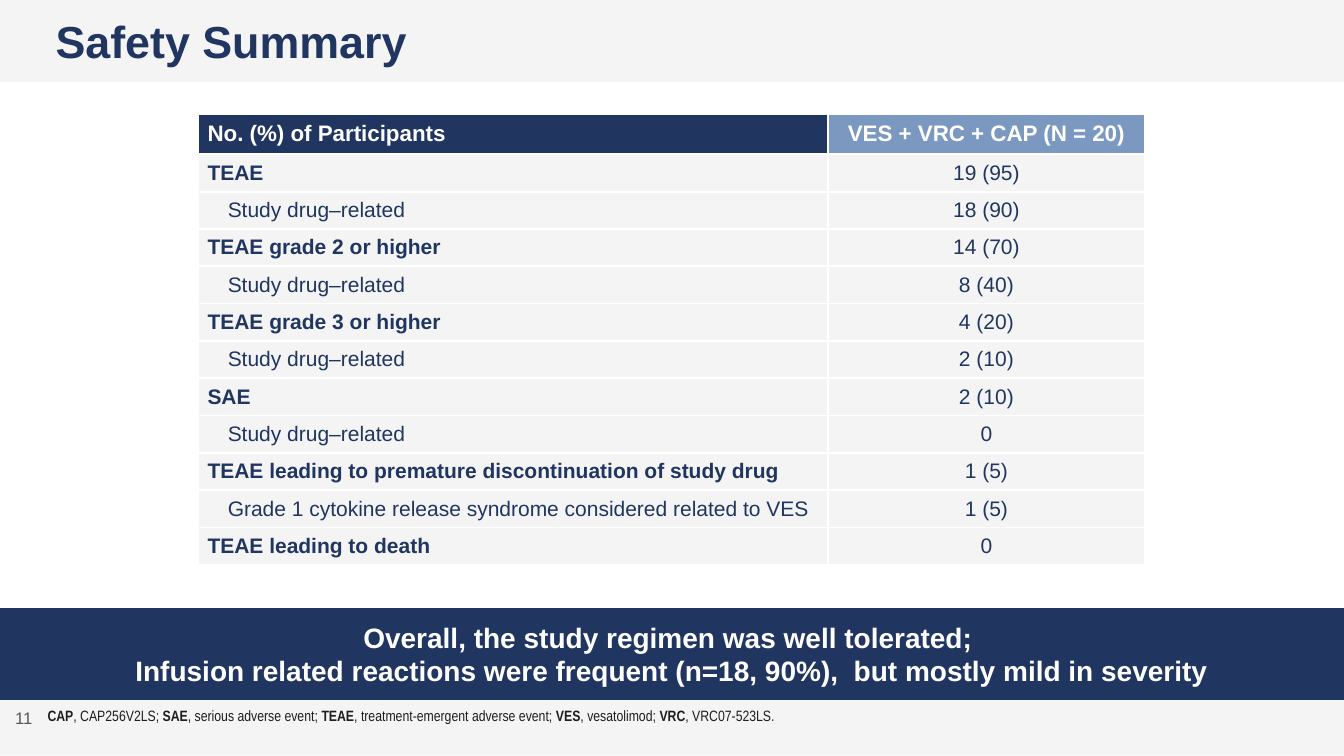
from lxml.etree import SubElement
from pptx import Presentation
from pptx.dml.color import RGBColor
from pptx.enum.shapes import MSO_SHAPE
from pptx.enum.text import MSO_ANCHOR, PP_ALIGN
from pptx.oxml.ns import qn
from pptx.util import Cm, Pt

COLORS = {
    "navy": "203661",
    "blue": "7B98C1",
    "pale": "F4F4F4",
    "white": "FFFFFF",
    "ink": "1E1E1E",
    "grey": "565656",
}
SLIDE_WIDTH = 33.87
HEADINGS = ("No. (%) of Participants", "VES + VRC + CAP (N = 20)")
EVENTS = [
    ("TEAE", "19 (95)", False),
    ("Study drug–related", "18 (90)", True),
    ("TEAE grade 2 or higher", "14 (70)", False),
    ("Study drug–related", "8 (40)", True),
    ("TEAE grade 3 or higher", "4 (20)", False),
    ("Study drug–related", "2 (10)", True),
    ("SAE", "2 (10)", False),
    ("Study drug–related", "0", True),
    ("TEAE leading to premature discontinuation of study drug", "1 (5)", False),
    ("Grade 1 cytokine release syndrome considered related to VES", "1 (5)", True),
    ("TEAE leading to death", "0", False),
]
ABBREVIATIONS = [
    ("CAP", "CAP256V2LS; "),
    ("SAE", "serious adverse event; "),
    ("TEAE", "treatment-emergent adverse event; "),
    ("VES", "vesatolimod; "),
    ("VRC", "VRC07-523LS."),
]
CONCLUSION = [
    "Overall, the study regimen was well tolerated; ",
    "Infusion related reactions were frequent (n=18, 90%),  but mostly mild in severity",
]


def color(name):
    """Return the named colour."""
    return RGBColor.from_string(COLORS[name])


def add_run(paragraph, text, size, ink, bold=False, font="Arial"):
    """Append one styled run to a paragraph."""
    run = paragraph.add_run()
    run.text = text
    run.font.name = font
    run.font.size = Pt(size)
    run.font.bold = bold
    run.font.color.rgb = color(ink)


def set_frame(frame, left=0, other=0):
    """Wrap a text frame, centre it vertically and set its margins in cm."""
    frame.word_wrap = True
    frame.vertical_anchor = MSO_ANCHOR.MIDDLE
    frame.margin_left = Cm(left)
    frame.margin_top = frame.margin_right = frame.margin_bottom = Cm(other)
    return frame


def add_band(slide, top, height, fill):
    """Draw a plain band across the whole slide."""
    band = slide.shapes.add_shape(
        MSO_SHAPE.RECTANGLE, Cm(0), Cm(top), Cm(SLIDE_WIDTH), Cm(height))
    band.shadow.inherit = False
    band.fill.solid()
    band.fill.fore_color.rgb = color(fill)
    band.line.fill.background()
    return band


def add_label(slide, left, top, width, height, align):
    """Add a text box without margins and return its first paragraph."""
    label = slide.shapes.add_textbox(Cm(left), Cm(top), Cm(width), Cm(height))
    paragraph = set_frame(label.text_frame).paragraphs[0]
    paragraph.alignment = align
    return paragraph


def add_borders(cell):
    """Give a cell white rules on all four sides."""
    properties = cell._tc.get_or_add_tcPr()
    for position, side in enumerate(("a:lnL", "a:lnR", "a:lnT", "a:lnB")):
        rule = properties.makeelement(qn(side), {"w": str(Pt(1.5))})
        solid = SubElement(rule, qn("a:solidFill"))
        SubElement(solid, qn("a:srgbClr"), val=COLORS["white"])
        properties.insert(position, rule)


def fill_cell(cell, text, fill, size, ink, bold, align, indent=0.25):
    """Write and style one table cell."""
    cell.fill.solid()
    cell.fill.fore_color.rgb = color(fill)
    cell.vertical_anchor = MSO_ANCHOR.MIDDLE
    cell.margin_left = Cm(indent)
    paragraph = cell.text_frame.paragraphs[0]
    paragraph.alignment = align
    add_run(paragraph, text, size, ink, bold)
    add_borders(cell)


def add_safety_table(slide):
    """Add the table of adverse events."""
    table = slide.shapes.add_table(
        len(EVENTS) + 1, 2, Cm(4.98), Cm(2.87), Cm(23.88), Cm(11.4)).table
    table.horz_banding = False
    for column, width in zip(table.columns, (15.88, 8)):
        column.width = Cm(width)
    for row in table.rows:
        row.height = Cm(0.94)
    table.rows[0].height = Cm(1.02)

    aligns = (PP_ALIGN.LEFT, PP_ALIGN.CENTER)
    for column, (heading, fill) in enumerate(zip(HEADINGS, ("navy", "blue"))):
        fill_cell(table.cell(0, column), heading, fill, 16, "white", True, aligns[column])
    for row, (event, count, nested) in enumerate(EVENTS, start=1):
        fill_cell(table.cell(row, 0), event, "pale", 15, "navy", not nested,
                  aligns[0], 0.76 if nested else 0.25)
        fill_cell(table.cell(row, 1), count, "pale", 15, "navy", False, aligns[1])


def add_title(slide):
    """Add the title band."""
    title = add_band(slide, -0.02, 2.1, "pale")
    paragraph = set_frame(title.text_frame, left=1.4).paragraphs[0]
    paragraph.alignment = PP_ALIGN.LEFT
    add_run(paragraph, "Safety Summary", 32, "navy", True)


def add_conclusion(slide):
    """Add the conclusion banner."""
    banner = add_band(slide, 15.36, 2.24, "navy")
    banner.line.color.rgb = color("navy")
    banner.line.width = Pt(2)
    frame = set_frame(banner.text_frame, 0.25, 0.25)
    for position, sentence in enumerate(CONCLUSION):
        paragraph = frame.add_paragraph() if position else frame.paragraphs[0]
        paragraph.alignment = PP_ALIGN.CENTER
        add_run(paragraph, sentence, 20, "white", True)


def add_footer(slide):
    """Add the footer band, abbreviations and slide number."""
    add_band(slide, 17.35, 1.69, "pale")
    footnote = add_label(slide, 1.2, 17.65, 31.3, 0.82, PP_ALIGN.LEFT)
    footnote.line_spacing = 0.85
    for term, meaning in ABBREVIATIONS:
        add_run(footnote, term, 10.7, "ink", True, "Arial Narrow")
        add_run(footnote, f", {meaning}", 10.7, "ink", False, "Arial Narrow")
    number = add_label(slide, 0, 17.48, 1.2, 1.2, PP_ALIGN.CENTER)
    add_run(number, "11", 11.9, "grey")


def main():
    """Build and save the safety summary slide."""
    deck = Presentation()
    deck.slide_width = Cm(SLIDE_WIDTH)
    deck.slide_height = Cm(19.05)
    slide = deck.slides.add_slide(deck.slide_layouts[6])
    add_footer(slide)
    add_title(slide)
    add_safety_table(slide)
    add_conclusion(slide)
    deck.save("out.pptx")


if __name__ == "__main__":
    main()
